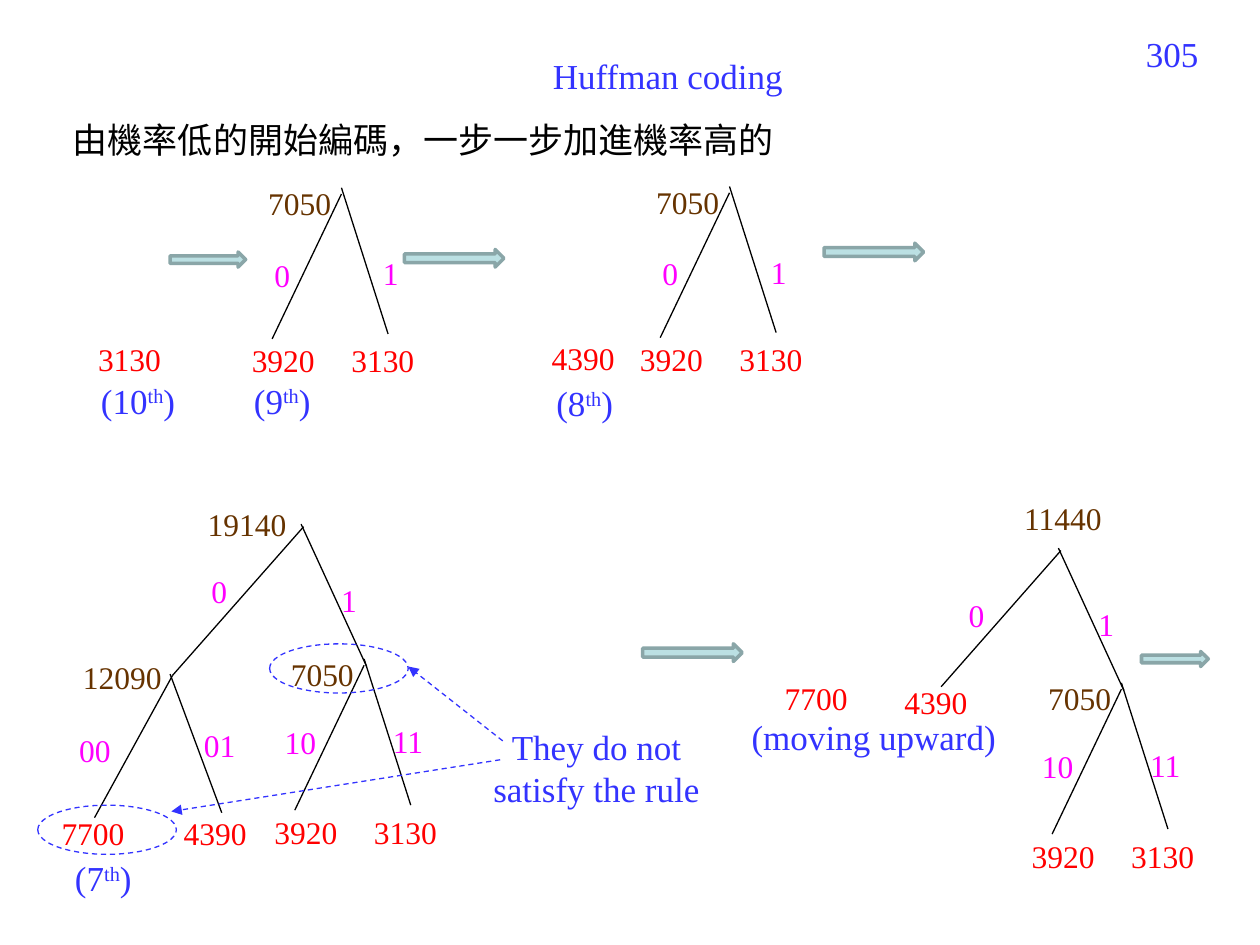
from lxml.etree import SubElement
from pptx import Presentation
from pptx.dml.color import RGBColor
from pptx.enum.dml import MSO_LINE
from pptx.enum.shapes import MSO_CONNECTOR, MSO_SHAPE
from pptx.enum.text import MSO_AUTO_SIZE, PP_ALIGN
from pptx.oxml.ns import qn
from pptx.util import Pt

PX = 9144  # 100 px to the inch
HUE = {name: RGBColor.from_string(code) for name, code in {
    "blue": "3333FF", "black": "000000", "red": "FF0000", "brown": "663300",
    "pink": "FF00FF", "fill": "BBE0E3", "edge": "8AA6A8"}.items()}
LEFT, MID, RIGHT = PP_ALIGN.LEFT, PP_ALIGN.CENTER, PP_ALIGN.RIGHT

deck = Presentation()
deck.slide_width, deck.slide_height = 1000 * PX, 750 * PX
slide = deck.slides.add_slide(deck.slide_layouts[6])
shapes = slide.shapes


def write(text, x, y, hue, wide=0, high=44, align=LEFT):
    """Add a label; "^" parts off a superscript. Without a width it does not wrap."""
    width = wide or 20 + 12.5 * len(text)
    box = shapes.add_textbox(x * PX, y * PX, int(width * PX),
                             (high if wide else 40) * PX)
    frame = box.text_frame
    frame.word_wrap = bool(wide)
    frame.auto_size = MSO_AUTO_SIZE.SHAPE_TO_FIT_TEXT
    para = frame.paragraphs[0]
    para.alignment = align
    look = {"name": "Times New Roman", "size": Pt(20 if wide else 18)}
    for spot, part in enumerate(text.split("^")):
        run = para.add_run()
        run.text = part
        for key, value in look.items():
            setattr(run.font, key, value)
        run.font.color.rgb = HUE[hue]
        if spot == 1:
            run._r.get_or_add_rPr().set("baseline", "30000")


def draw(x1, y1, x2, y2, hue="black", head=False):
    """Add a plain branch, or a dashed pointer with a head."""
    line = shapes.add_connector(MSO_CONNECTOR.STRAIGHT,
                                x1 * PX, y1 * PX, x2 * PX, y2 * PX)
    line.line.width = Pt(0.75)
    line.line.color.rgb = HUE[hue]
    if head:
        line.line.dash_style = MSO_LINE.DASH
        SubElement(line.line._get_or_add_ln(), qn("a:tailEnd"), type="triangle")
    SubElement(line._element.spPr, qn("a:effectLst"))


# Page number, title and intro
write("305", 728, 21, "blue", 233, 52, RIGHT)
write("Huffman coding", 279, 38, "blue", 502, align=MID)
write("由機率低的開始編碼，一步一步加進機率高的", 48, 89, "black", 680)

# The 7050 tree, at each of its four tops
for x, y, bits, dx, dy in [
        (271, 149, "01", 0, 0), (579, 148, "01", 0, 0),
        (289, 523, ("10", "11"), -10, -3), (890, 542, ("10", "11"), -10, -3)]:
    draw(x, y + 5, x - 55, y + 120)
    draw(x, y, x + 37, y + 116)
    write("3130", x - 2, y + 117, "red")
    write("3920", x - 81, y + 117, "red")
    write("7050", x - 68, y - 8, "brown")
    write(bits[0], x - 63 + dx, y + 49 + dy, "pink")
    write(bits[1], x + 23 + dx, y + 48 + dy, "pink")

# Upper forks of the two lower trees
for x, y, endx, endy in [(239, 416, 137, 536), (840, 435, 747, 545)]:
    draw(x + 2, y + 2, endx, endy)
    draw(x, y, x + 52, y + 113)
    write("0", x - 81, y + 33, "pink")
    write("1", x + 22, y + 40, "pink")

# The 12090 fork
draw(137, 536, 75, 649)
draw(135, 535, 176, 645)

# Other node values and codes
for text, x, y, hue in [
        ("3130", 68, 265, "red"), ("4390", 428, 264, "red"),
        ("7700", 39, 641, "red"), ("4390", 136, 641, "red"),
        ("7700", 613, 534, "red"), ("4390", 708, 537, "red"),
        ("12090", 56, 517, "brown"), ("19140", 155, 396, "brown"),
        ("11440", 803, 391, "brown"),
        ("00", 53, 575, "pink"), ("01", 152, 571, "pink")]:
    write(text, x, y, hue)

# Step arrows
for x, y, w, h in [(135, 200, 60, 12), (321, 198, 79, 14), (654, 193, 79, 14),
                   (510, 511, 79, 14), (906, 517, 53, 12)]:
    step = shapes.add_shape(MSO_SHAPE.RIGHT_ARROW, x * PX, y * PX, w * PX, h * PX)
    step.shadow.inherit = False
    step.fill.solid()
    step.fill.fore_color.rgb = HUE["fill"]
    step.line.color.rgb = HUE["edge"]
    step.line.width = Pt(2)

# Dashed rings and their pointers
for x, y in [(30, 639), (214, 511)]:
    ring = shapes.add_shape(MSO_SHAPE.OVAL, x * PX, y * PX, 110 * PX, 39 * PX)
    ring.shadow.inherit = False
    ring.fill.background()
    ring.line.color.rgb = HUE["blue"]
    ring.line.width = Pt(0.75)
    ring.line.dash_style = MSO_LINE.DASH
draw(397, 603, 136, 644, "blue", True)
draw(399, 588, 324, 529, "blue", True)

# Blue remarks
for text, x, y, wide, high in [
        ("They do not satisfy the rule", 375, 571, 197, 77),
        ("(moving upward)", 580, 563, 227, 44),
        ("(10^th^)", 55, 296, 109, 44), ("(9^th^)", 174, 296, 100, 44),
        ("(8^th^)", 414, 298, 100, 44), ("(7^th^)", 32, 675, 100, 44)]:
    write(text, x, y, "blue", wide, high, MID)

deck.save("out.pptx")
